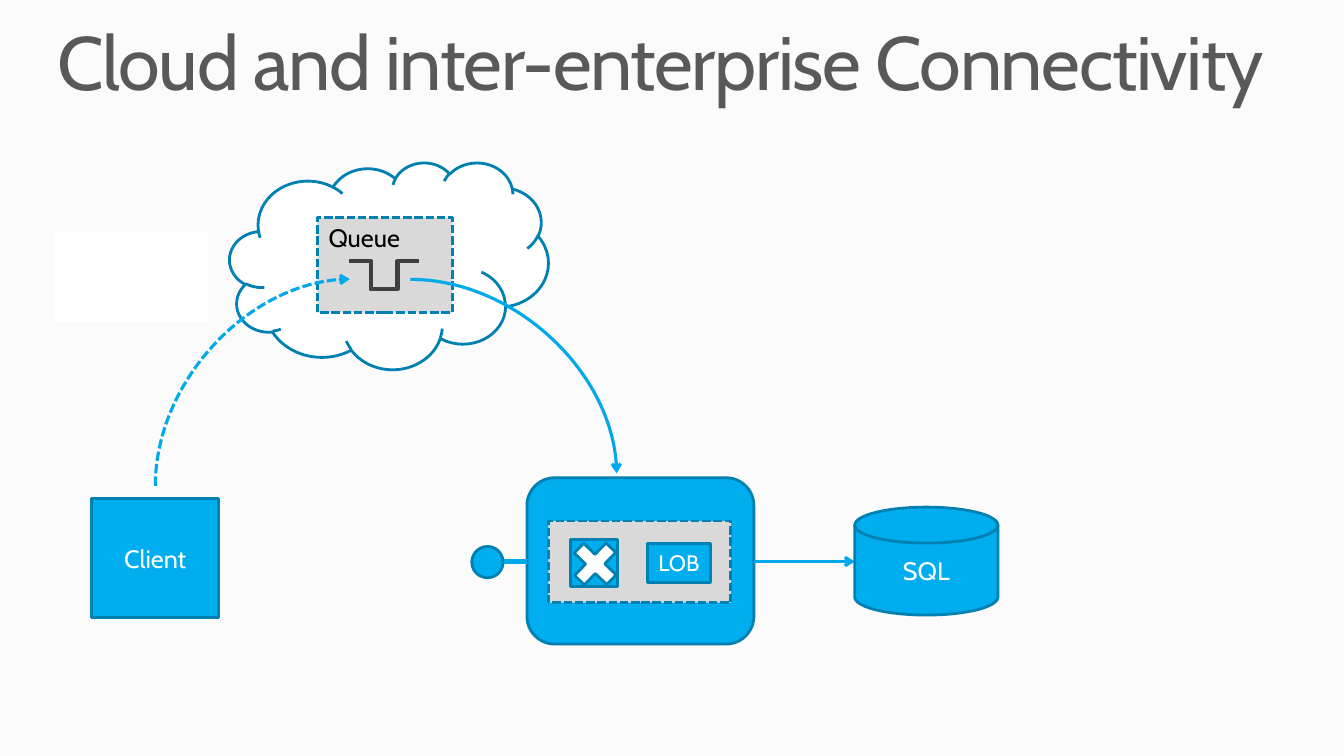
from pptx import Presentation
from pptx.dml.color import RGBColor
from pptx.enum.dml import MSO_LINE
from pptx.enum.shapes import MSO_CONNECTOR as Route, MSO_SHAPE as Preset
from pptx.enum.text import MSO_ANCHOR, MSO_AUTO_SIZE, PP_ALIGN
from pptx.oxml.ns import qn
from pptx.util import Cm, Pt
from lxml.etree import SubElement

FONT = "Cabin"
BLUE, EDGE, ARROW = "00AEEF", "0081B1", "00AAEA"
GREY, WHITE, DARK = "D9D9D9", "FFFFFF", "3F3F3F"
AXIS = 14.15  # height of the line through service and database


def color(value):
    return RGBColor.from_string(value)


def set_attributes(target, values):
    for name, value in values.items():
        setattr(target, name, value)


def write(shape, text, size, ink, **paragraph_format):
    paragraph = shape.text_frame.paragraphs[0]
    set_attributes(paragraph, paragraph_format)
    run = paragraph.add_run()
    run.text = text
    set_attributes(run.font, {"name": FONT, "size": Pt(size)})
    run.font.color.rgb = color(ink)
    return run


def add_box(slide, preset, box, fill=BLUE, edge=EDGE, dash=None, label=None,
            size=18, rotation=0, adjustments=()):
    shape = slide.shapes.add_shape(preset, *map(Cm, box))
    shape.shadow.inherit = False
    shape.rotation = rotation
    for index, value in enumerate(adjustments):
        shape.adjustments[index] = value
    shape.fill.solid()
    shape.fill.fore_color.rgb = color(fill)
    shape.line.color.rgb = color(edge)
    set_attributes(shape.line, {"width": Pt(2), "dash_style": dash})
    if label:
        set_attributes(shape.text_frame, {
            "word_wrap": False, "vertical_anchor": MSO_ANCHOR.MIDDLE})
        write(shape, label, size, WHITE, alignment=PP_ALIGN.CENTER)


def add_label(slide, box, text, size, ink, frame_format, **paragraph_format):
    shape = slide.shapes.add_textbox(*map(Cm, box))
    set_attributes(shape.text_frame, frame_format)
    return write(shape, text, size, ink, **paragraph_format)


def add_link(slide, route, ends, ink=ARROW, width=2.25, dash=None,
             arrow=False, rotation=0):
    connector = slide.shapes.add_connector(route, *map(Cm, ends))
    connector.line.color.rgb = color(ink)
    set_attributes(connector.line, {"width": Pt(width), "dash_style": dash})
    properties = connector._element.spPr
    if route == Route.CURVE:  # quarter bend
        properties.find(qn("a:prstGeom")).set("prst", "curvedConnector2")
    if rotation:
        properties.find(qn("a:xfrm")).set("rot", str(rotation * 60000))
    if arrow:
        SubElement(properties.find(qn("a:ln")), qn("a:tailEnd"), type="arrow")
    SubElement(properties, qn("a:effectLst"))


def add_title(slide):
    margins = {f"margin_{side}": 0 for side in ("left", "top", "right", "bottom")}
    run = add_label(slide, (1.45, 0.64, 30.96, 2.08),
                    "Cloud and inter-enterprise Connectivity", 54, "595959",
                    {"word_wrap": True, **margins}, line_spacing=0.9)
    run.font._element.set("spc", "-100")


def add_service(slide):
    add_box(slide, Preset.ROUNDED_RECTANGLE, (13.28, 12.04, 5.72, 4.19))
    # Endpoint
    add_box(slide, Preset.OVAL, (11.89, 13.77, 0.79, 0.79))
    add_link(slide, Route.STRAIGHT, (12.7, AXIS, 13.28, AXIS), width=3)
    # Host with its components
    add_box(slide, Preset.RECTANGLE, (13.82, 13.13, 4.6, 2.06), GREY,
            dash=MSO_LINE.SQUARE_DOT)
    add_box(slide, Preset.RECTANGLE, (16.31, 13.69, 1.6, 0.99), label="LOB", size=16)
    add_box(slide, Preset.RECTANGLE, (14.38, 13.59, 1.19, 1.19))
    add_box(slide, Preset.CROSS, (14.43, 13.64, 1.14, 1.14), WHITE,
            rotation=314.1, adjustments=[0.35])


def add_cloud(slide):
    add_box(slide, Preset.CLOUD_CALLOUT, (5.79, 4.09, 8.03, 5.21), WHITE,
            adjustments=[-1, 0.13])
    add_box(slide, Preset.RECTANGLE, (1.4, 5.87, 3.81, 2.21), WHITE, WHITE)
    # Queue
    add_box(slide, Preset.RECTANGLE, (8, 5.49, 3.4, 2.39), GREY,
            dash=MSO_LINE.SQUARE_DOT)
    add_label(slide, (8.03, 5.49, 2.39, 1.02), "Queue", 18, "000000",
              {"word_wrap": False, "auto_size": MSO_AUTO_SIZE.SHAPE_TO_FIT_TEXT})
    for start, end in ((9.47, 10.57), (9.9, 8.79)):
        add_link(slide, Route.ELBOW, (start, 7.29, end, 6.58), DARK, 3)


def main():
    presentation = Presentation()
    set_attributes(presentation, {"slide_width": Cm(33.87), "slide_height": Cm(19.05)})
    slide = presentation.slides.add_slide(presentation.slide_layouts[6])
    slide.background.fill.solid()
    slide.background.fill.fore_color.rgb = color("FBFBFB")

    add_title(slide)
    add_box(slide, Preset.RECTANGLE, (2.31, 12.57, 3.2, 3), label="Client")
    add_service(slide)
    add_cloud(slide)

    # Message path: client to queue, queue to service, service to database
    add_link(slide, Route.CURVE, (8.97, 12.09, 3.76, 7.19),
             dash=MSO_LINE.SQUARE_DOT, arrow=True, rotation=90)
    add_link(slide, Route.CURVE, (10.34, 7.04, 15.54, 11.93), arrow=True)
    add_link(slide, Route.STRAIGHT, (19, AXIS, 21.54, AXIS), arrow=True)
    add_box(slide, Preset.FLOWCHART_MAGNETIC_DISK, (21.54, 12.78, 3.61, 2.72),
            label="SQL")
    presentation.save("out.pptx")


if __name__ == "__main__":
    main()
